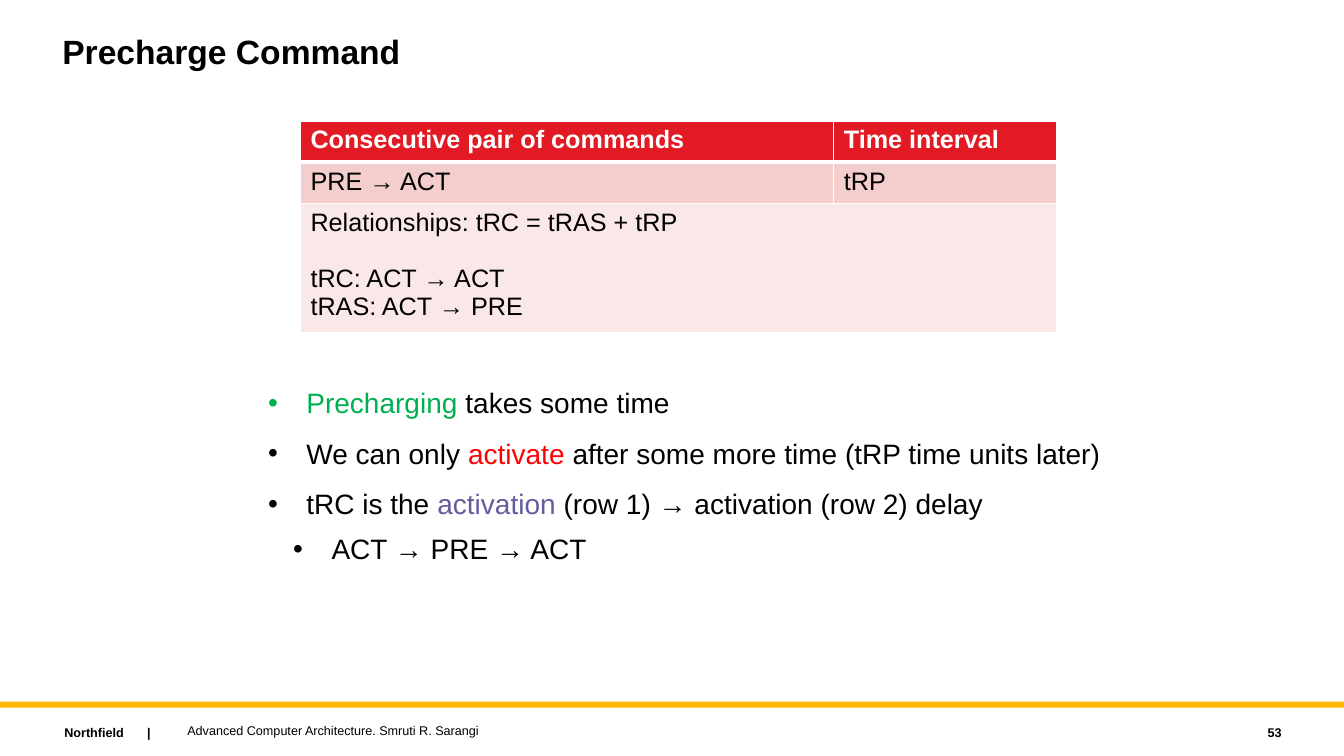
from dataclasses import dataclass

from lxml.etree import SubElement
from pptx import Presentation
from pptx.dml.color import RGBColor as RGB
from pptx.enum.shapes import MSO_SHAPE as SHAPE
from pptx.enum.text import MSO_ANCHOR as ANCHOR, PP_ALIGN as ALIGN
from pptx.oxml import parse_xml
from pptx.oxml.ns import nsdecls, qn
from pptx.util import Inches, Pt


@dataclass(frozen=True)
class Theme:
    font: str = "Arial"
    black: str = "000000"
    white: str = "FFFFFF"
    gold: str = "FFB600"
    header: str = "E21A23"
    row: str = "F4CDCD"
    note: str = "FAE8E8"
    green: str = "00B050"
    red: str = "FF0000"
    violet: str = "625D9C"
    title_size: int = 24
    body_size: int = 20
    table_size: int = 18
    footer_size: int = 9


T = Theme()


@dataclass(frozen=True)
class Span:
    text: str
    color: str = T.black


@dataclass(frozen=True)
class Bullet:
    spans: tuple[Span, ...]
    level: int = 0


@dataclass(frozen=True)
class Label:
    text: str
    box: tuple[float, float, float, float]
    size: int = T.footer_size
    bold: bool = False
    anchor: ANCHOR = ANCHOR.MIDDLE
    align: ALIGN = ALIGN.LEFT
    spacing: float = 1.0
    tab: float = 0


@dataclass(frozen=True)
class Row:
    texts: tuple[str, ...]
    height: float
    fill: str
    color: str = T.black
    bold: bool = False
    top: int = 1
    bottom: int = 1


LABELS = (
    Label("Northfield\t|", (0.54, 7.14, 2.27, 0.25), bold=True, tab=0.82),
    Label("Precharge Command", (0.52, 0.3, 10, 0.9), T.title_size, True, ANCHOR.TOP, spacing=0.9),
    Label("Advanced Computer Architecture. Smruti R. Sarangi", (1.76, 7.12, 8, 0.25)),
    Label("53", (11.41, 7.14, 1.4, 0.25), bold=True, align=ALIGN.RIGHT),
)

BULLETS = (
    Bullet((Span("Precharging", T.green), Span(" takes some time"))),
    Bullet((Span("We can only "), Span("activate", T.red),
            Span(" after some more time (tRP time units later)"))),
    Bullet((Span("tRC is the "), Span("activation", T.violet),
            Span(" (row 1) → activation (row 2) delay"))),
    Bullet((Span("ACT → PRE → ACT"),), level=1),
)

COLUMNS = (5.29, 2.21)
ROWS = (
    Row(("Consecutive pair of commands", "Time interval"), 0.41, T.header, T.white, True, bottom=3),
    Row(("PRE → ACT", "tRP"), 0.41, T.row, top=3),
    Row(("Relationships: tRC = tRAS + tRP",), 1.22, T.note),
)
DEFINITIONS = ("tRC: ACT → ACT", "tRAS: ACT → PRE")


def add_run(p, text: str, size: int, color: str = T.black, bold: bool = False) -> None:
    r = p.add_run()
    r.text = text
    r.font.name = T.font
    r.font.size = Pt(size)
    r.font.bold = bold
    r.font.color.rgb = RGB.from_string(color)


def add_box(s, box: tuple[float, float, float, float], anchor: ANCHOR = ANCHOR.TOP):
    tf = s.shapes.add_textbox(*map(Inches, box)).text_frame
    tf.word_wrap = True
    tf.vertical_anchor = anchor
    return tf


def add_label(s, label: Label) -> None:
    p = add_box(s, label.box, label.anchor).paragraphs[0]
    if label.tab:
        tabs = SubElement(p._p.get_or_add_pPr(), qn("a:tabLst"))
        SubElement(tabs, qn("a:tab"), pos=str(Inches(label.tab)), algn="l")
    p.alignment = label.align
    p.line_spacing = label.spacing
    add_run(p, label.text, label.size, bold=label.bold)


def add_bullets(s) -> None:
    tf = add_box(s, (2.56, 3.78, 8.58, 2.02))
    for i, bullet in enumerate(BULLETS):
        p = tf.add_paragraph() if i else tf.paragraphs[0]
        pPr = p._p.get_or_add_pPr()
        pPr.set("marL", str(Inches(0.38 + 0.25 * bullet.level)))
        pPr.set("indent", str(Inches(-0.38)))
        SubElement(pPr, qn("a:buFont"), typeface=T.font)
        SubElement(pPr, qn("a:buChar"), char="•")
        p.level = bullet.level
        if i:
            p.space_before = Pt(8 if bullet.level else 12)
        for span in bullet.spans:
            add_run(p, span.text, T.body_size, span.color)


def style_cell(cell, row: Row) -> None:
    cell.fill.solid()
    cell.fill.fore_color.rgb = RGB.from_string(row.fill)
    tcPr = cell._tc.get_or_add_tcPr()
    widths = {"lnL": 1, "lnR": 1, "lnT": row.top, "lnB": row.bottom}
    for i, (side, width) in enumerate(widths.items()):
        tcPr.insert(i, parse_xml(
            f'<a:{side} {nsdecls("a")} w="{Pt(width)}"><a:solidFill>'
            f'<a:srgbClr val="{T.white}"/></a:solidFill></a:{side}>'))


def add_commands_table(s) -> None:
    height = sum(row.height for row in ROWS)
    table = s.shapes.add_table(len(ROWS), len(COLUMNS), Inches(2.98), Inches(1.2),
                               Inches(sum(COLUMNS)), Inches(height)).table
    table.first_row = table.horz_banding = False
    for column, width in zip(table.columns, COLUMNS):
        column.width = Inches(width)
    for i, row in enumerate(ROWS):
        table.rows[i].height = Inches(row.height)
        for j in range(len(COLUMNS)):
            style_cell(table.cell(i, j), row)
        for j, text in enumerate(row.texts):
            p = table.cell(i, j).text_frame.paragraphs[0]
            add_run(p, text, T.table_size, row.color, row.bold)
    last = len(ROWS) - 1
    relations = table.cell(last, 0)
    relations.merge(table.cell(last, len(COLUMNS) - 1))
    p = relations.text_frame.add_paragraph()
    p.space_before = Pt(20)
    for i, text in enumerate(DEFINITIONS):
        if i:
            p.add_line_break()
        add_run(p, text, T.table_size)


def main() -> None:
    prs = Presentation()
    prs.slide_width, prs.slide_height = Inches(13.33), Inches(7.5)
    s = prs.slides.add_slide(prs.slide_layouts[6])
    band = s.shapes.add_shape(SHAPE.RECTANGLE, 0, Inches(6.96), prs.slide_width, Inches(0.06))
    band.shadow.inherit = False
    band.fill.solid()
    band.fill.fore_color.rgb = RGB.from_string(T.gold)
    band.line.fill.background()
    for label in LABELS:
        add_label(s, label)
    add_bullets(s)
    add_commands_table(s)
    prs.save("out.pptx")


if __name__ == "__main__":
    main()
